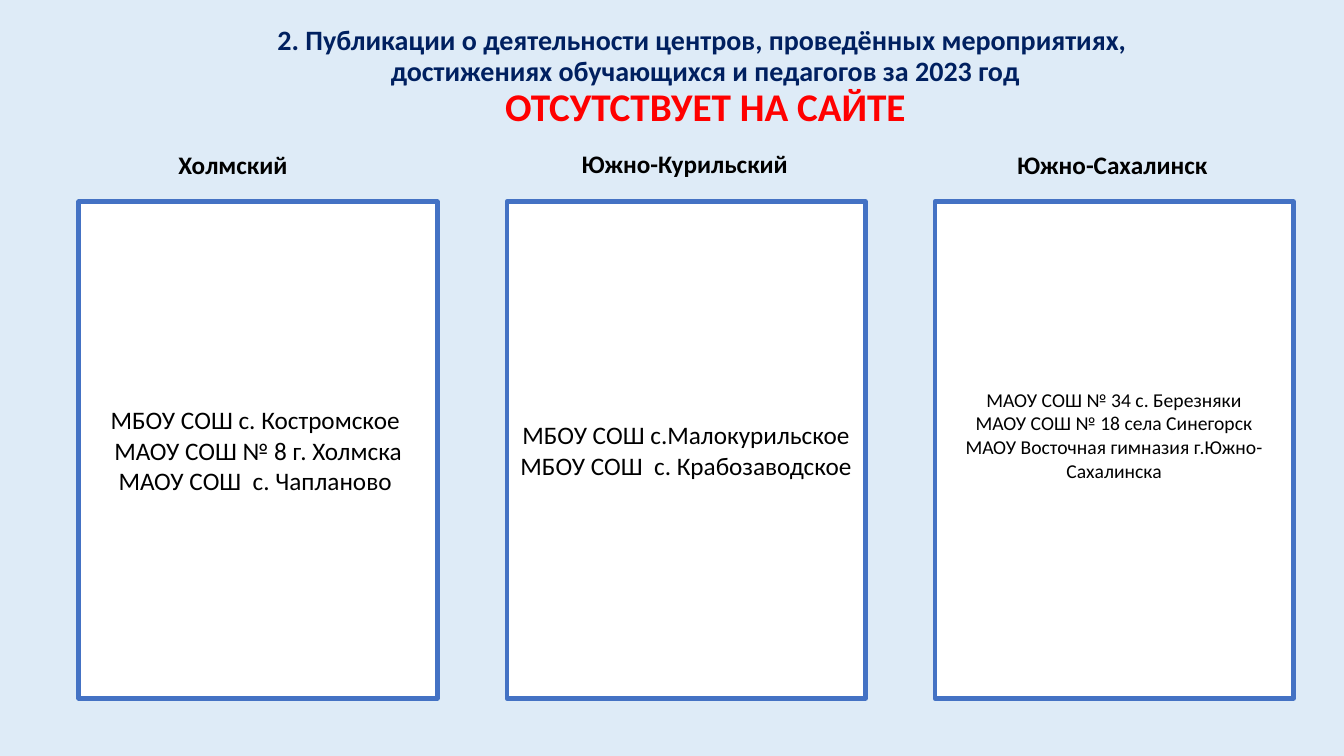
from pptx import Presentation
from pptx.dml.color import RGBColor
from pptx.enum.shapes import MSO_SHAPE
from pptx.enum.text import MSO_ANCHOR, MSO_AUTO_SIZE, PP_ALIGN
from pptx.util import Inches, Pt

COLORS = {
    "background": "DEEBF7",
    "card": "FFFFFF",
    "border": "4472C4",
    "text": "000000",
    "heading": "002060",
    "alert": "FF0000",
}

CARD_LEFT, CARD_TOP, CARD_WIDTH, CARD_HEIGHT = 0.78, 2, 3.56, 4.93
CARD_STEP = 4.245

# District, label left, label top, label width, schools, text size, bottom inset
DISTRICTS = [
    ("Холмский", 1.67, 1.43, 1.29,
     ["МБОУ СОШ с. Костромское ", "МАОУ СОШ № 8 г. Холмска",
      "МАОУ СОШ  с. Чапланово "], 18, 0.05),
    ("Южно-Курильский", 5.67, 1.42, 2.27,
     ["МБОУ СОШ с.Малокурильское", "МБОУ СОШ  с. Крабозаводское"], 18, 0.05),
    ("Южно-Сахалинск", 9.99, 1.43, 2.11,
     ["МАОУ СОШ № 34 с. Березняки", "МАОУ СОШ № 18 села Синегорск",
      "МАОУ Восточная гимназия г.Южно-Сахалинска"], 14, 0.35),
]

TITLE_LINES = [
    ("2. Публикации о деятельности центров, проведённых мероприятиях, ", 20, "heading"),
    ("достижениях обучающихся и педагогов за 2023 год", 20, "heading"),
    ("ОТСУТСТВУЕТ НА САЙТЕ", 28, "alert"),
]


class SlideBuilder:
    """Holds the font and the current slide."""

    def __init__(self, page, font="Calibri"):
        self.page = page
        self.font = font

    def color(self, name):
        return RGBColor.from_string(COLORS[name])

    def background(self):
        fill = self.page.background.fill
        fill.solid()
        fill.fore_color.rgb = self.color("background")

    def span(self, para, text, size, color="text", bold=False):
        span = para.add_run()
        span.text = text
        span.font.name = self.font
        span.font.size = Pt(size)
        span.font.bold = bold
        span.font.color.rgb = self.color(color)

    def card(self, left, schools, size, bottom_inset):
        box = self.page.shapes.add_shape(
            MSO_SHAPE.RECTANGLE, Inches(left), Inches(CARD_TOP),
            Inches(CARD_WIDTH), Inches(CARD_HEIGHT))
        box.shadow.inherit = False
        box.fill.solid()
        box.fill.fore_color.rgb = self.color("card")
        box.line.color.rgb = self.color("border")
        box.line.width = Pt(3)
        frame = box.text_frame
        frame.word_wrap = True
        frame.vertical_anchor = MSO_ANCHOR.MIDDLE
        frame.margin_bottom = Inches(bottom_inset)
        for index, school in enumerate(schools):
            para = frame.add_paragraph() if index else frame.paragraphs[0]
            para.alignment = PP_ALIGN.CENTER
            self.span(para, school, size)

    def label(self, left, top, width, text):
        box = self.page.shapes.add_textbox(
            Inches(left), Inches(top), Inches(width), Inches(0.4))
        box.text_frame.word_wrap = False
        box.text_frame.auto_size = MSO_AUTO_SIZE.SHAPE_TO_FIT_TEXT
        self.span(box.text_frame.paragraphs[0], text, 18, bold=True)

    def title(self, lines):
        box = self.page.shapes.add_textbox(
            Inches(0.92), Inches(0.1), Inches(12.15), Inches(1.35))
        frame = box.text_frame
        frame.word_wrap = True
        frame.vertical_anchor = MSO_ANCHOR.MIDDLE
        para = frame.paragraphs[0]
        para.alignment = PP_ALIGN.CENTER
        para.line_spacing = 0.9
        for index, (text, size, color) in enumerate(lines):
            if index:
                para.add_line_break()
            self.span(para, text, size, color, bold=True)


def main():
    deck = Presentation()
    deck.slide_width = Inches(13.33)
    deck.slide_height = Inches(7.5)
    builder = SlideBuilder(deck.slides.add_slide(deck.slide_layouts[6]))
    builder.background()
    for index, district in enumerate(DISTRICTS):
        name, left, top, width, schools, size, bottom_inset = district
        builder.card(CARD_LEFT + index * CARD_STEP, schools, size, bottom_inset)
        builder.label(left, top, width, name)
    builder.title(TITLE_LINES)
    deck.save("out.pptx")


if __name__ == "__main__":
    main()
